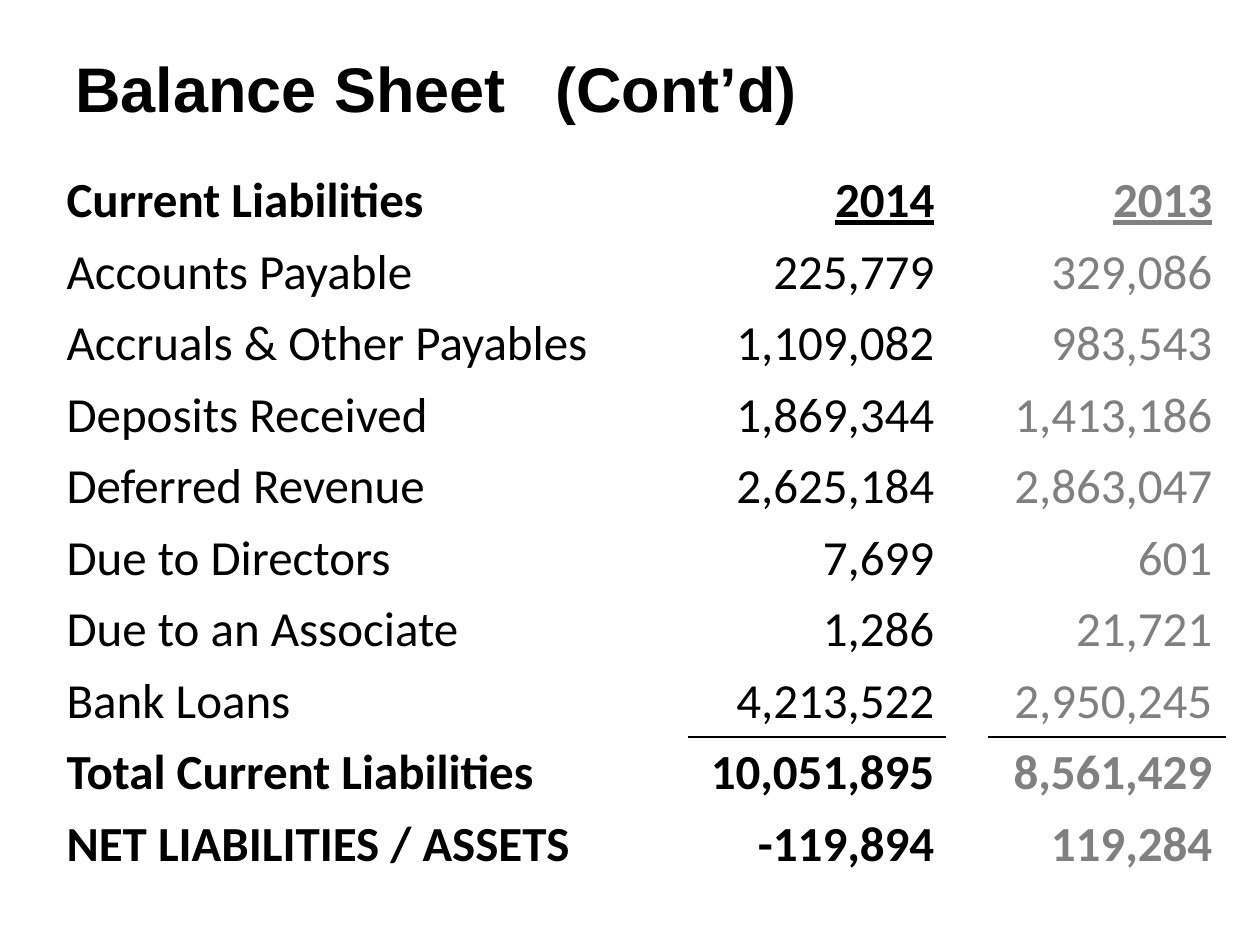
"""Build the balance sheet slide listing current liabilities for two years."""
from dataclasses import dataclass

from lxml.etree import SubElement
from pptx import Presentation
from pptx.dml.color import RGBColor
from pptx.enum.text import MSO_ANCHOR, PP_ALIGN
from pptx.oxml import parse_xml
from pptx.oxml.ns import nsdecls, qn
from pptx.util import Pt

TITLE = "Balance Sheet\t(Cont’d)"
ROWS = [
    ("Current Liabilities", "2014", "2013"),
    ("Accounts Payable", "225,779", "329,086"),
    ("Accruals & Other Payables", "1,109,082", "983,543"),
    ("Deposits Received", "1,869,344", "1,413,186"),
    ("Deferred Revenue", "2,625,184", "2,863,047"),
    ("Due to Directors", "7,699", "601"),
    ("Due to an Associate", "1,286", "21,721"),
    ("Bank Loans", "4,213,522", "2,950,245"),
    ("Total Current Liabilities", "10,051,895", "8,561,429"),
    ("NET LIABILITIES / ASSETS", "-119,894", "119,284"),
]
HEADER_ROW, TOTAL_ROW = 0, 8
LABEL, CURRENT, GAP, PRIOR = range(4)
COLUMN_WIDTHS = (635, 258, 42, 236)
ROW_HEIGHT = 66
TABLE_LEFT, TABLE_TOP = 54, 165
TITLE_BOX = (63, 37, 1197, 100)
TITLE_TAB = 480


@dataclass(frozen=True)
class Theme:
    ink: str = "000000"
    muted: str = "808080"
    title_font: str = "Arial"
    body_font: str = "Calibri"
    title_size: int = 36
    body_size: int = 28
    rule: int = 1


THEME = Theme()


def px(value):
    return round(value * 914400 / 126)


def style(font, name, size, color, bold):
    font.name = name
    font.size = Pt(size)
    font.color.rgb = RGBColor.from_string(color)
    font.bold = bold


def add_title(slide):
    frame = slide.shapes.add_textbox(*map(px, TITLE_BOX)).text_frame
    frame.word_wrap = True
    frame.vertical_anchor = MSO_ANCHOR.MIDDLE
    paragraph = frame.paragraphs[0]
    paragraph.text = TITLE
    tabs = SubElement(paragraph._p.get_or_add_pPr(), qn("a:tabLst"))
    SubElement(tabs, qn("a:tab"), pos=str(px(TITLE_TAB)), algn="l")
    style(paragraph.font, THEME.title_font, THEME.title_size, THEME.ink, True)


def add_rule(cell, edge):
    line = parse_xml(
        f'<a:{edge} {nsdecls("a")} w="{Pt(THEME.rule)}"><a:solidFill>'
        f'<a:srgbClr val="{THEME.ink}"/></a:solidFill></a:{edge}>'
    )
    cell._tc.get_or_add_tcPr().insert(0, line)


def fill_cell(cell, text, row, column):
    paragraph = cell.text_frame.paragraphs[0]
    paragraph.text = text
    color = THEME.muted if column == PRIOR else THEME.ink
    bold = row == HEADER_ROW or row >= TOTAL_ROW
    style(paragraph.font, THEME.body_font, THEME.body_size, color, bold)
    if column != LABEL:
        paragraph.alignment = PP_ALIGN.RIGHT
        paragraph.font.underline = row == HEADER_ROW


def add_balance_table(slide):
    table = slide.shapes.add_table(
        len(ROWS), len(COLUMN_WIDTHS), px(TABLE_LEFT), px(TABLE_TOP),
        px(sum(COLUMN_WIDTHS)), px(ROW_HEIGHT * len(ROWS)),
    ).table
    table.first_row = table.horz_banding = False
    for column, width in zip(table.columns, COLUMN_WIDTHS):
        column.width = px(width)
    for cell in table.iter_cells():
        cell.fill.background()
    for row, values in enumerate(ROWS):
        table.rows[row].height = px(ROW_HEIGHT)
        for column, text in zip((LABEL, CURRENT, PRIOR), values):
            fill_cell(table.cell(row, column), text, row, column)
    for column in (CURRENT, PRIOR):
        add_rule(table.cell(TOTAL_ROW - 1, column), "lnB")
        add_rule(table.cell(TOTAL_ROW, column), "lnT")


def main():
    presentation = Presentation()
    presentation.slide_width, presentation.slide_height = px(1260), px(945)
    slide = presentation.slides.add_slide(presentation.slide_layouts[6])
    add_title(slide)
    add_balance_table(slide)
    presentation.save("out.pptx")


if __name__ == "__main__":
    main()
